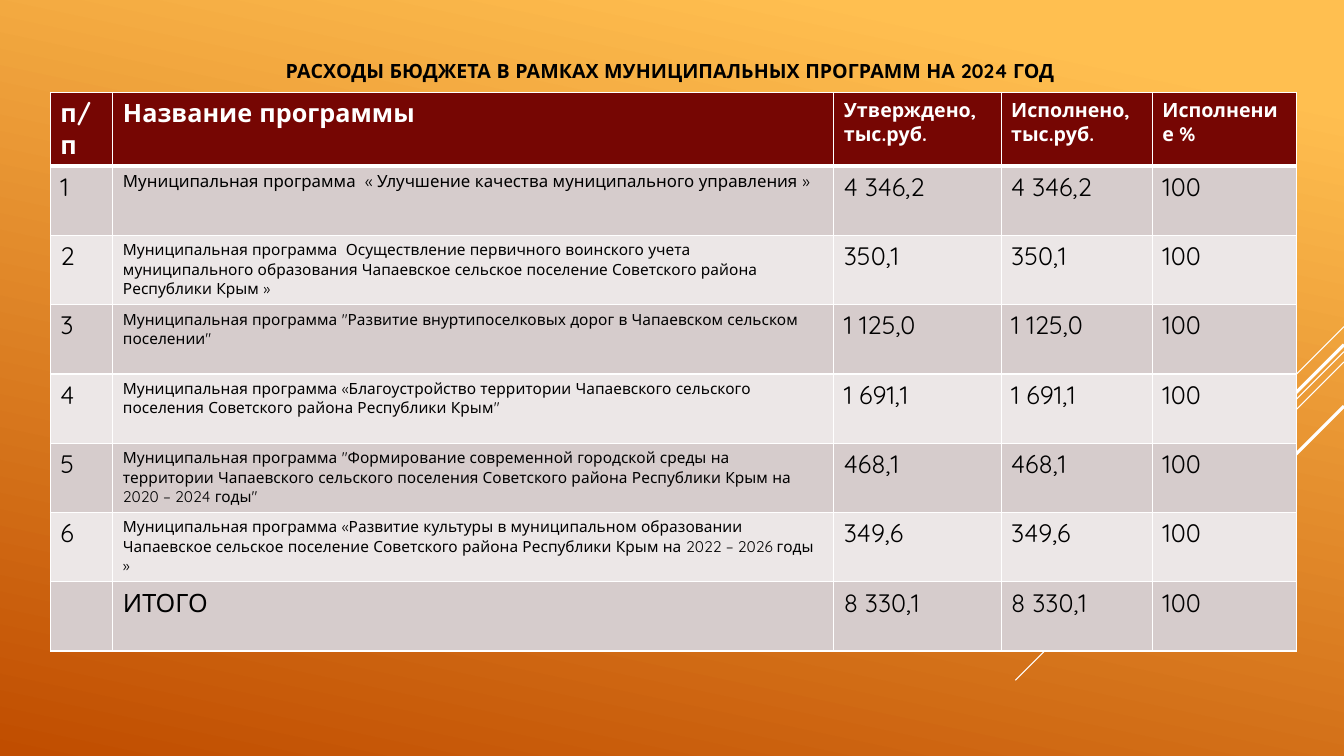
"""Build a slide with a table of municipal programme spending for 2024."""
from dataclasses import dataclass

from lxml.etree import SubElement
from pptx import Presentation
from pptx.dml.color import RGBColor
from pptx.enum.shapes import MSO_CONNECTOR
from pptx.enum.text import MSO_ANCHOR, MSO_AUTO_SIZE, PP_ALIGN
from pptx.oxml.ns import qn
from pptx.util import Inches, Pt

COLOURS = {
    "glow": "FFBF50", "ember": "C04D00", "white": "FFFFFF", "black": "000000",
    "header": "760603", "odd": "D6CCCC", "even": "ECE7E7",
}
FONT = "Quicksand"
SLIDE_WIDTH, SLIDE_HEIGHT = Inches(13.33), Inches(7.5)
COLUMN_SHARES = (4.65, 53.64, 12.45, 11.25, 10.73)
TABLE_LEFT, TABLE_TOP, TABLE_HEIGHT = 3.75, 12.27, 73.33
HEADINGS = ("п/п", "Название программы", "Утверждено, тыс.руб.",
            "Исполнено, тыс.руб.", "Исполнение %")
HEADING_SIZES = (18, 18, 14, 14, 14)


@dataclass(frozen=True)
class Programme:
    number: str
    name: str
    amount: str
    name_size: int = 11


@dataclass(frozen=True)
class Ray:
    top: float
    reach: float
    weight: float = 0.75


PROGRAMMES = (
    Programme("1", "Муниципальная программа  « Улучшение качества муниципального управления »",
              "4 346,2", 12),
    Programme("2", "Муниципальная программа  Осуществление первичного воинского учета "
              "муниципального образования Чапаевское сельское поселение Советского района "
              "Республики Крым »", "350,1"),
    Programme("3", "Муниципальная программа \"Развитие внуртипоселковых дорог в Чапаевском "
              "сельском поселении\"", "1 125,0"),
    Programme("4", "Муниципальная программа «Благоустройство территории Чапаевского сельского "
              "поселения Советского района Республики Крым\"", "1 691,1"),
    Programme("5", "Муниципальная программа \"Формирование современной городской среды на "
              "территории Чапаевского сельского поселения Советского района Республики Крым "
              "на 2020 – 2024 годы\"", "468,1"),
    Programme("6", "Муниципальная программа «Развитие культуры в муниципальном образовании "
              "Чапаевское сельское поселение Советского района Республики Крым "
              "на 2022 – 2026 годы »", "349,6"),
    Programme("", "ИТОГО", "8 330,1", 18),
)
RAYS = (Ray(43.2, 7.5), Ray(46.53, 24.45), Ray(47.87, 15.53),
        Ray(45.6, 14.33, 2.25), Ray(53.73, 10.43, 2.25))


def across(share: float) -> int:
    """Turn a percentage of the slide width into a length."""
    return round(SLIDE_WIDTH * share / 100)


def down(share: float) -> int:
    """Turn a percentage of the slide height into a length."""
    return round(SLIDE_HEIGHT * share / 100)


def colour(name: str) -> RGBColor:
    """Look up a named colour."""
    return RGBColor.from_string(COLOURS[name])


def add_text(paragraph, text: str, size: int, colour_name: str, bold: bool) -> None:
    """Add one formatted run to a paragraph."""
    run = paragraph.add_run()
    run.text = text
    run.font.name = FONT
    run.font.size = Pt(size)
    run.font.bold = bold
    run.font.color.rgb = colour(colour_name)


def paint_background(slide) -> None:
    """Fill the slide with the orange gradient."""
    fill = slide.background.fill
    fill.gradient()
    fill.gradient_angle = 258
    for stop, position, name in zip(fill.gradient_stops, (0.1, 1), ("glow", "ember")):
        stop.position = position
        stop.color.rgb = colour(name)


def draw_ray(slide, ray: Ray) -> None:
    """Draw a diagonal line from the right edge down to the left."""
    reach, top = across(ray.reach), down(ray.top)
    line = slide.shapes.add_connector(
        MSO_CONNECTOR.STRAIGHT, SLIDE_WIDTH, top, SLIDE_WIDTH - reach, top + reach)
    line.line.color.rgb = colour("white")
    line.line.width = Pt(ray.weight)
    SubElement(line._element.spPr, qn("a:effectLst"))


def write_title(slide) -> None:
    """Place and format the slide title."""
    title = slide.shapes.title
    title.left, title.top = across(5.63), down(7.6)
    title.width, title.height = across(88.45), down(3.47)
    frame = title.text_frame
    frame.auto_size = MSO_AUTO_SIZE.NONE
    frame.word_wrap = True
    frame.vertical_anchor = MSO_ANCHOR.MIDDLE
    paragraph = frame.paragraphs[0]
    paragraph.alignment = PP_ALIGN.CENTER
    add_text(paragraph, "РАСХОДЫ БЮДЖЕТА В РАМКАХ МУНИЦИПАЛЬНЫХ ПРОГРАММ НА 2024 ГОД",
             14, "black", True)


def format_cell(cell, text: str, size: int, fill_name: str, top: int, bottom: int) -> None:
    """Write a cell, then set its borders and fill."""
    is_header = fill_name == "header"
    if text:
        add_text(cell.text_frame.paragraphs[0], text, size,
                 "white" if is_header else "black", is_header)
    properties = cell._tc.get_or_add_tcPr()
    for side, weight in (("L", 1), ("R", 1), ("T", top), ("B", bottom)):
        border = SubElement(properties, qn(f"a:ln{side}"), w=str(Pt(weight)))
        solid = SubElement(border, qn("a:solidFill"))
        SubElement(solid, qn("a:srgbClr"), val=COLOURS["white"])
    cell.fill.solid()
    cell.fill.fore_color.rgb = colour(fill_name)


def draw_table(slide) -> None:
    """Draw the spending table."""
    row_count = len(PROGRAMMES) + 1
    table = slide.shapes.add_table(
        row_count, len(HEADINGS), across(TABLE_LEFT), down(TABLE_TOP),
        across(sum(COLUMN_SHARES)), down(TABLE_HEIGHT)).table
    for column, share in zip(table.columns, COLUMN_SHARES):
        column.width = across(share)
    for row in table.rows:
        row.height = down(TABLE_HEIGHT / row_count)
    for column, (heading, size) in enumerate(zip(HEADINGS, HEADING_SIZES)):
        format_cell(table.cell(0, column), heading, size, "header", 1, 3)
    for row, programme in enumerate(PROGRAMMES, start=1):
        texts = (programme.number, programme.name, programme.amount, programme.amount, "100")
        sizes = (18, programme.name_size, 18, 18, 18)
        for column, (text, size) in enumerate(zip(texts, sizes)):
            format_cell(table.cell(row, column), text, size,
                        "odd" if row % 2 else "even", 3 if row == 1 else 1, 1)


def main() -> None:
    """Assemble and save the presentation."""
    presentation = Presentation()
    presentation.slide_width, presentation.slide_height = SLIDE_WIDTH, SLIDE_HEIGHT
    slide = presentation.slides.add_slide(presentation.slide_layouts.get_by_name("Title Only"))
    paint_background(slide)
    for ray in RAYS:
        draw_ray(slide, ray)
    write_title(slide)
    draw_table(slide)
    presentation.save("out.pptx")


if __name__ == "__main__":
    main()
